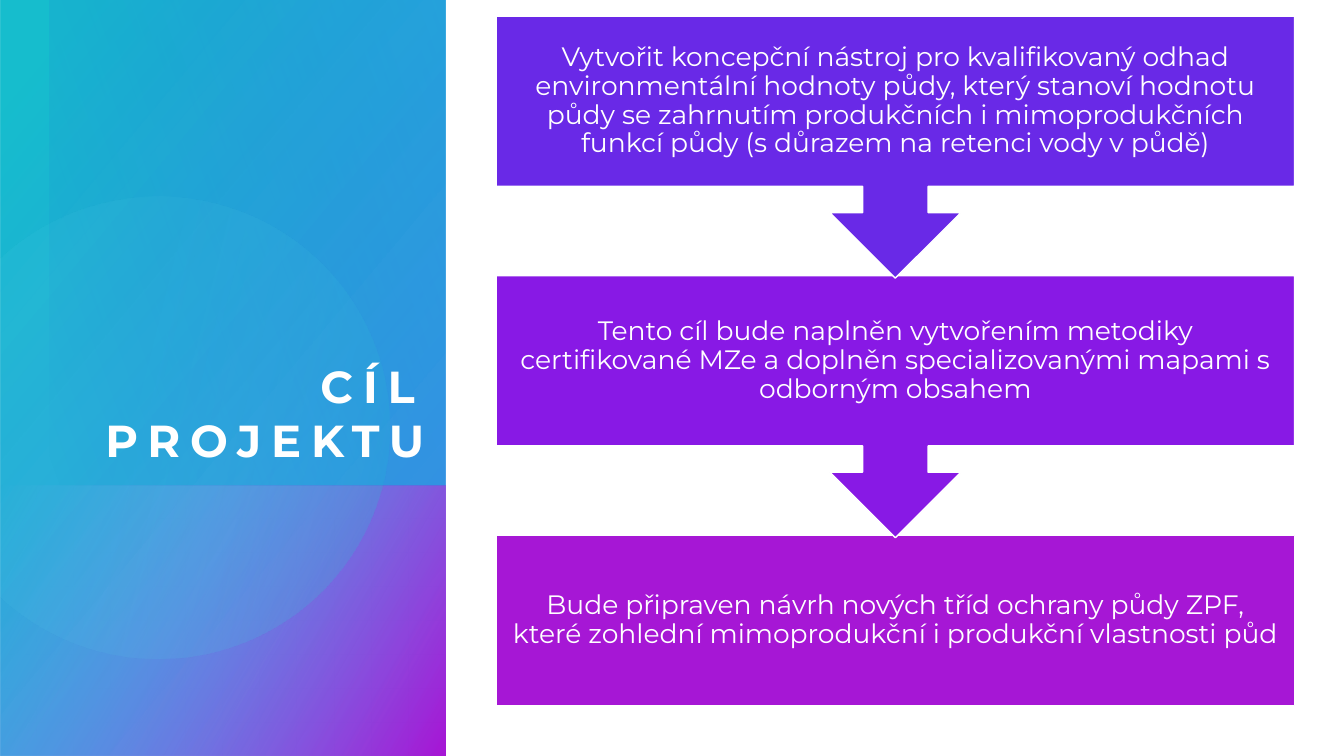
import math

from lxml import etree
from pptx import Presentation
from pptx.dml.color import RGBColor
from pptx.enum import shapes, text
from pptx.oxml.ns import qn
from pptx.util import Inches, Pt

WHITE = "FFFFFF"
FONT = "Montserrat"
TITLE = "CÍL PROJEKTU"
TITLE_BOX = (0.5, 0.95, 3.71, 3.68)

GOALS = [
    ("Vytvořit koncepční nástroj pro kvalifikovaný odhad environmentální hodnoty půdy, "
     "který stanoví hodnotu půdy se zahrnutím produkčních i mimoprodukčních funkcí půdy "
     "(s důrazem na retenci vody v půdě)", "6929E7"),
    ("Tento cíl bude naplněn vytvořením metodiky certifikované MZe a doplněn "
     "specializovanými mapami s odborným obsahem", "8819E5"),
    ("Bude připraven návrh nových tříd ochrany půdy ZPF, které zohlední "
     "mimoprodukční i produkční vlastnosti půd", "A617D5"),
]
GOAL_LEFT, GOAL_TOP, GOAL_WIDTH = 4.92, 0.16, 7.92
GOAL_STEP, BOX_HEIGHT, CALLOUT_HEIGHT = 2.575, 1.69, 2.6

# Gradient stops: position %, colour, opacity %
SIDE_PANEL = dict(box=(-1.54, 1.54, 7.5, 4.42), rotation=270, angle=50,
                  stops=[(8, "16BDCD", 100), (100, "2987E7", 89)])
PURPLE_CORNER = dict(box=(0.86, 3.95, 2.69, 4.42), rotation=270, angle=60,
                     stops=[(0, "7FB7F1", 0), (99, "A617D5", 100)])
TOP_SHADE = dict(box=(0.05, 0.45, 4.81, 3.92), rotation=90, angle=110,
                 stops=[(0, "2987E7", 29), (100, "2837D8", 0)])
DISC = dict(center=(1.57, 4.24), radius=2.29, angle=14,
            stops=[(36, "66E3EF", 6), (100, "16BDCD", 26)])


def rgb(value):
    return RGBColor.from_string(value)


def fill_gradient(shape, stops, angle):
    """Apply a two-stop gradient; the angle runs clockwise."""
    shape.shadow.inherit = False
    shape.line.fill.background()
    shape.fill.gradient()
    shape.fill.gradient_angle = 360 - angle
    for stop, (position, colour, opacity) in zip(shape.fill.gradient_stops, stops):
        stop.position = position / 100
        stop.color.rgb = rgb(colour)
    clr_tags = shape._element.spPr.iter(qn("a:srgbClr"))
    for clr, (_, _, opacity) in zip(clr_tags, stops):
        etree.SubElement(clr, qn("a:alpha"), val=str(opacity * 1000))


def add_panel(slide, box, rotation, angle, stops):
    panel = slide.shapes.add_shape(shapes.MSO_SHAPE.RECTANGLE, *map(Inches, box))
    panel.rotation = rotation
    panel._element.spPr.find(qn("a:xfrm")).set("flipH", "1")
    fill_gradient(panel, stops, angle)


def add_disc(slide, center, radius, angle, stops):
    """Draw a disc cut off by the left edge of the slide."""
    cx, cy = center
    cut = math.degrees(math.acos(-cx / radius))
    turns = [math.radians(-cut + 2 * cut * i / 120) for i in range(121)]
    points = [(Inches(cx + radius * math.cos(t)), Inches(cy + radius * math.sin(t)))
              for t in turns]
    outline = slide.shapes.build_freeform(*points[0])
    outline.add_line_segments(points[1:], close=True)
    fill_gradient(outline.convert_to_shape(), stops, angle)


def write(shape, wording, frame_format, paragraph_format, font_format):
    frame = shape.text_frame
    frame.text = wording
    paragraph = frame.paragraphs[0]
    font = paragraph.runs[0].font
    font.color.rgb = rgb(WHITE)
    for target, values in ((frame, frame_format), (paragraph, paragraph_format),
                           (font, font_format)):
        for name, value in values.items():
            setattr(target, name, value)
    return font


def margins(inches):
    return {f"margin_{side}": Inches(inches) for side in ("left", "top", "right", "bottom")}


def add_title(slide):
    title = slide.shapes.add_textbox(*map(Inches, TITLE_BOX))
    font = write(title, TITLE,
                 dict(margins(0), word_wrap=True, vertical_anchor=text.MSO_ANCHOR.BOTTOM),
                 dict(alignment=text.PP_ALIGN.RIGHT),
                 dict(name=FONT, size=Pt(32), bold=True))
    font._element.set("spc", "700")


def add_goal(slide, index):
    wording, colour = GOALS[index]
    is_last = index == len(GOALS) - 1
    kind = shapes.MSO_SHAPE.RECTANGLE if is_last else shapes.MSO_SHAPE.DOWN_ARROW_CALLOUT
    height = BOX_HEIGHT if is_last else CALLOUT_HEIGHT
    top = GOAL_TOP + index * GOAL_STEP
    goal = slide.shapes.add_shape(kind, *map(Inches, (GOAL_LEFT, top, GOAL_WIDTH, height)))
    goal.shadow.inherit = False
    goal.fill.solid()
    goal.fill.fore_color.rgb = rgb(colour)
    goal.line.color.rgb = rgb(WHITE)
    goal.line.width = Pt(1)
    write(goal, wording,
          dict(margins(0.15), word_wrap=True, vertical_anchor=text.MSO_ANCHOR.MIDDLE),
          dict(alignment=text.PP_ALIGN.CENTER, line_spacing=0.9),
          dict(name=FONT, size=Pt(19)))


def main():
    deck = Presentation()
    deck.slide_width, deck.slide_height = Inches(13.33), Inches(7.5)
    slide = deck.slides.add_slide(deck.slide_layouts[6])
    add_panel(slide, **SIDE_PANEL)
    add_panel(slide, **PURPLE_CORNER)
    add_disc(slide, **DISC)
    add_panel(slide, **TOP_SHADE)
    add_title(slide)
    for index in reversed(range(len(GOALS))):
        add_goal(slide, index)
    deck.save("out.pptx")


if __name__ == "__main__":
    main()
